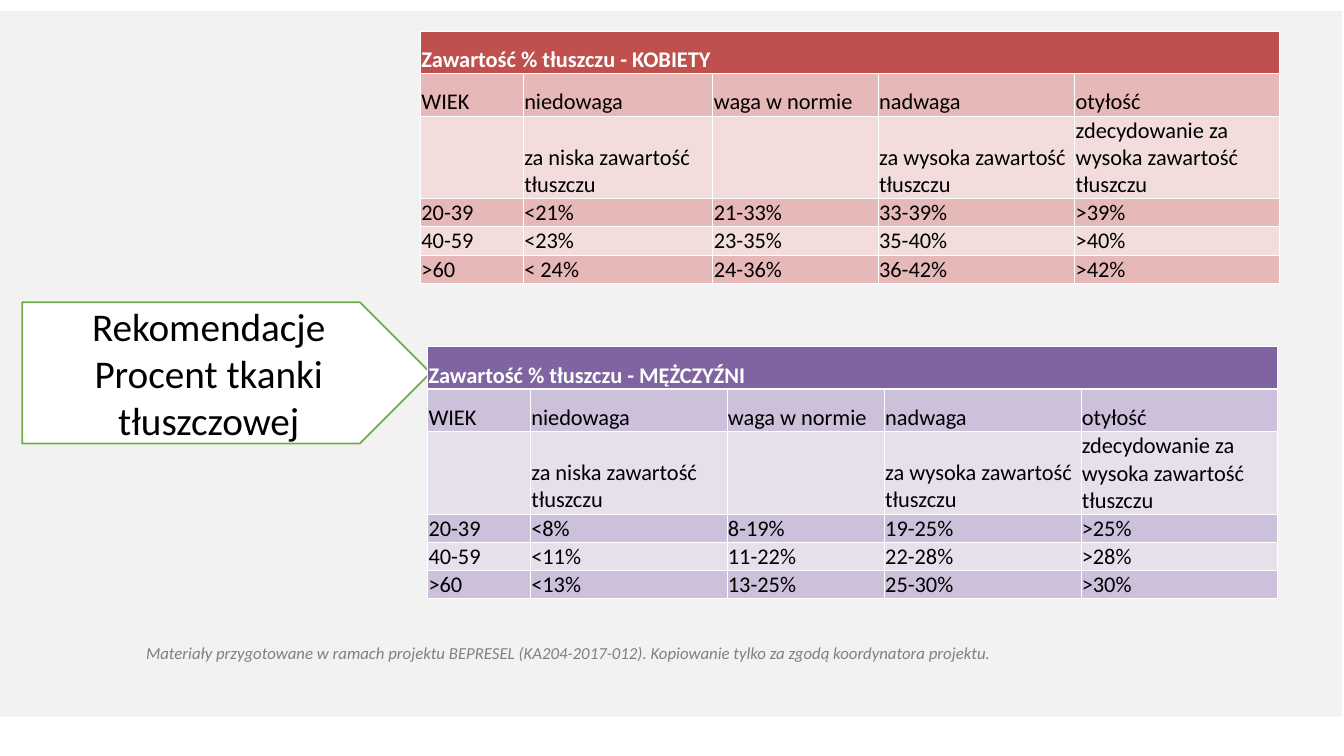
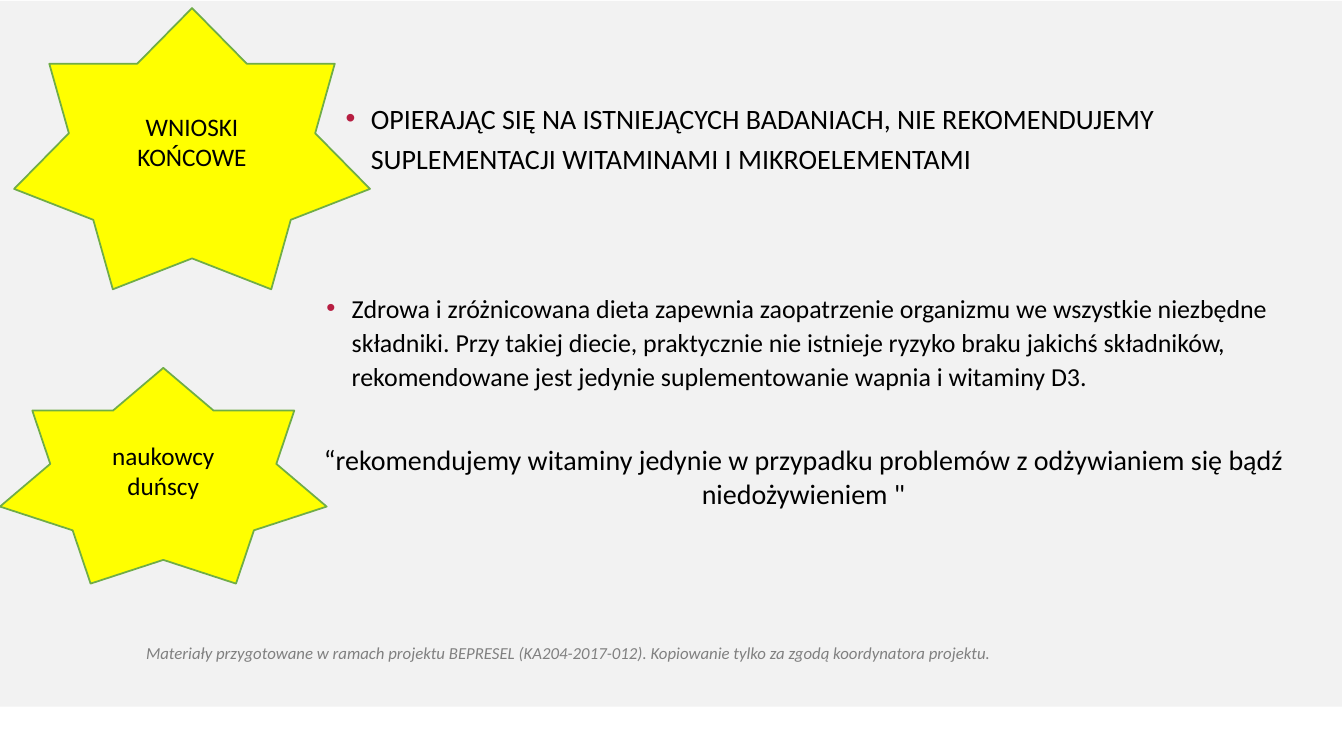
from dataclasses import dataclass

from lxml import etree
from pptx import Presentation
from pptx.dml.color import RGBColor
from pptx.enum.shapes import MSO_SHAPE
from pptx.enum.text import MSO_ANCHOR, PP_ALIGN
from pptx.oxml.ns import qn
from pptx.util import Emu, Pt

PX = 9144
RECTANGLE, PENTAGON, STAR = MSO_SHAPE.RECTANGLE, MSO_SHAPE.PENTAGON, MSO_SHAPE.STAR_7_POINT
LEFT, CENTER = PP_ALIGN.LEFT, PP_ALIGN.CENTER
TOP, MIDDLE, BOTTOM = MSO_ANCHOR.TOP, MSO_ANCHOR.MIDDLE, MSO_ANCHOR.BOTTOM


@dataclass(frozen=True)
class Theme:
    font: str = "Calibri"
    band: str = "F2F2F2"
    ink: str = "000000"
    white: str = "FFFFFF"
    muted: str = "808080"
    outline: str = "70AD47"
    star: str = "FFFF00"
    bullet: str = "B71E42"
    callout_size: float = 28
    quote_size: float = 20
    conclusion_size: float = 20
    diet_size: float = 18.5
    star_size: float = 18
    table_size: float = 16
    footer_size: float = 12
    outline_width: float = 1.25
    grid_width: float = 0.5
    title_rule_width: float = 1.5


THEME = Theme()

SLIDE_SIZE = (1333, 750)
FOOTER = ("Materiały przygotowane w ramach projektu BEPRESEL (KA204-2017-012). "
          "Kopiowanie tylko za zgodą koordynatora projektu.")
FOOTER_BOX = (135, 633, 1148, 30)

RECOMMENDATION = ["Rekomendacje", "Procent tkanki tłuszczowej"]
RECOMMENDATION_BOX = (22, 300, 405, 140)

CATEGORY_ROWS = [
    ("WIEK", "niedowaga", "waga w normie", "nadwaga", "otyłość"),
    ("", "za niska zawartość tłuszczu", "", "za wysoka zawartość tłuszczu",
     "zdecydowanie za wysoka zawartość tłuszczu"),
]
ROW_HEIGHTS = (42, 42, 82, 28, 28, 28)
FAT_TABLES = [
    {
        "title": "Zawartość % tłuszczu - KOBIETY",
        "origin": (417, 31),
        "columns": (102, 188, 164, 195, 203),
        "fills": ("C0504D", "E6B9B8", "F2DDDC"),
        "ages": [
            ("20-39", "<21%", "21-33%", "33-39%", ">39%"),
            ("40-59", "<23%", "23-35%", "35-40%", ">40%"),
            (">60", "< 24%", "24-36%", "36-42%", ">42%"),
        ],
    },
    {
        "title": "Zawartość % tłuszczu - MĘŻCZYŹNI",
        "origin": (424, 344),
        "columns": (102, 195, 156, 195, 195),
        "fills": ("8064A2", "CCC0DA", "E5E0EC"),
        "ages": [
            ("20-39", "<8%", "8-19%", "19-25%", ">25%"),
            ("40-59", "<11%", "11-22%", "22-28%", ">28%"),
            (">60", "<13%", "13-25%", "25-30%", ">30%"),
        ],
    },
]

STARS = [
    ("WNIOSKI KOŃCOWE", (14, 8, 353, 279)),
    ("naukowcy duńscy", (0, 365, 324, 214)),
]
CONCLUSIONS = [
    ("OPIERAJĄC SIĘ NA ISTNIEJĄCYCH BADANIACH, NIE REKOMENDUJEMY "
     "SUPLEMENTACJI WITAMINAMI I MIKROELEMENTAMI",
     (333, 89, 966, 105), THEME.conclusion_size, 1.2),
    ("Zdrowa i zróżnicowana dieta zapewnia zaopatrzenie organizmu we wszystkie "
     "niezbędne składniki. Przy takiej diecie, praktycznie nie istnieje ryzyko braku "
     "jakichś składników, rekomendowane jest jedynie suplementowanie wapnia i witaminy D3.",
     (314, 282, 966, 120), THEME.diet_size, 1.1),
]
QUOTE = ("“rekomendujemy witaminy jedynie w przypadku problemów z odżywianiem się "
         "bądź niedożywieniem \"")
QUOTE_BOX = (281, 434, 1032, 80)


def emu(lengths):
    return [Emu(length * PX) for length in lengths]


def paint(fill, color):
    fill.solid()
    fill.fore_color.rgb = RGBColor.from_string(color)


def write(frame, lines, size, color=THEME.ink, align=LEFT, anchor=TOP, bold=False, italic=False):
    frame.word_wrap = True
    frame.vertical_anchor = anchor
    for index, line in enumerate(lines):
        paragraph = frame.paragraphs[0] if index == 0 else frame.add_paragraph()
        paragraph.alignment = align
        run = paragraph.add_run()
        run.text = line
        run.font.name = THEME.font
        run.font.size = Pt(size)
        run.font.bold = bold
        run.font.italic = italic
        run.font.color.rgb = RGBColor.from_string(color)


def add_text(slide, box, text, size, **style):
    frame = slide.shapes.add_textbox(*emu(box)).text_frame
    write(frame, [text], size, **style)
    return frame.paragraphs[0]


def add_figure(slide, preset, box, fill, outlined=True):
    figure = slide.shapes.add_shape(preset, *emu(box))
    figure.shadow.inherit = False
    paint(figure.fill, fill)
    if outlined:
        figure.line.color.rgb = RGBColor.from_string(THEME.outline)
        figure.line.width = Pt(THEME.outline_width)
    else:
        figure.line.fill.background()
    return figure


def add_base(deck, band_top):
    slide = deck.slides.add_slide(deck.slide_layouts[6])
    add_figure(slide, RECTANGLE, (-2, band_top, 1333, 700), THEME.band, outlined=False)
    add_text(slide, FOOTER_BOX, FOOTER, THEME.footer_size, color=THEME.muted, italic=True)
    return slide


def add_bullet(paragraph, spacing):
    paragraph.line_spacing = spacing
    properties = paragraph._p.get_or_add_pPr()
    properties.set("marL", str(25 * PX))
    properties.set("indent", str(-25 * PX))
    color = etree.SubElement(properties, qn("a:buClr"))
    etree.SubElement(color, qn("a:srgbClr"), val=THEME.bullet)
    etree.SubElement(properties, qn("a:buFont"), typeface="Arial")
    etree.SubElement(properties, qn("a:buChar"), char="•")


def add_borders(cell, top, bottom):
    properties = cell._tc.get_or_add_tcPr()
    widths = {"lnL": THEME.grid_width, "lnR": THEME.grid_width, "lnT": top, "lnB": bottom}
    for side, width in widths.items():
        line = etree.SubElement(properties, qn(f"a:{side}"), w=str(Pt(width)))
        solid = etree.SubElement(line, qn("a:solidFill"))
        etree.SubElement(solid, qn("a:srgbClr"), val=THEME.white)


def add_fat_table(slide, content):
    title_row = (content["title"],) + ("",) * (len(content["columns"]) - 1)
    rows = [title_row, *CATEGORY_ROWS, *content["ages"]]
    size = (sum(content["columns"]), sum(ROW_HEIGHTS))
    table = slide.shapes.add_table(
        len(rows), len(title_row), *emu(content["origin"] + size)).table
    table.first_row = table.horz_banding = False
    for column, width in zip(table.columns, emu(content["columns"])):
        column.width = width
    for row, height in zip(table.rows, emu(ROW_HEIGHTS)):
        row.height = height
    title_fill, odd_fill, even_fill = content["fills"]
    for row_index, row in enumerate(rows):
        is_title = row_index == 0
        fill = title_fill if is_title else odd_fill if row_index % 2 else even_fill
        top = THEME.title_rule_width if row_index == 1 else THEME.grid_width
        bottom = THEME.title_rule_width if is_title else THEME.grid_width
        for column_index, text in enumerate(row):
            cell = table.cell(row_index, column_index)
            cell.margin_left = cell.margin_top = cell.margin_right = Emu(PX)
            cell.margin_bottom = 0
            cell.vertical_anchor = BOTTOM
            add_borders(cell, top, bottom)
            paint(cell.fill, fill)
            if text:
                write(cell.text_frame, [text], THEME.table_size, anchor=BOTTOM, bold=is_title,
                      color=THEME.white if is_title else THEME.ink)
    table.cell(0, 0).merge(table.cell(0, len(title_row) - 1))


def build_recommendations(deck):
    slide = add_base(deck, 11)
    callout = add_figure(slide, PENTAGON, RECOMMENDATION_BOX, THEME.white)
    write(callout.text_frame, RECOMMENDATION, THEME.callout_size, align=CENTER, anchor=MIDDLE)
    for content in FAT_TABLES:
        add_fat_table(slide, content)


def build_conclusions(deck):
    slide = add_base(deck, 1)
    add_text(slide, QUOTE_BOX, QUOTE, THEME.quote_size, align=CENTER)
    for label, box in STARS:
        star = add_figure(slide, STAR, box, THEME.star)
        write(star.text_frame, [label], THEME.star_size, align=CENTER, anchor=MIDDLE)
    for text, box, size, spacing in CONCLUSIONS:
        add_bullet(add_text(slide, box, text, size), spacing)


def main():
    deck = Presentation()
    deck.slide_width, deck.slide_height = emu(SLIDE_SIZE)
    build_recommendations(deck)
    build_conclusions(deck)
    deck.save("out.pptx")


if __name__ == "__main__":
    main()
